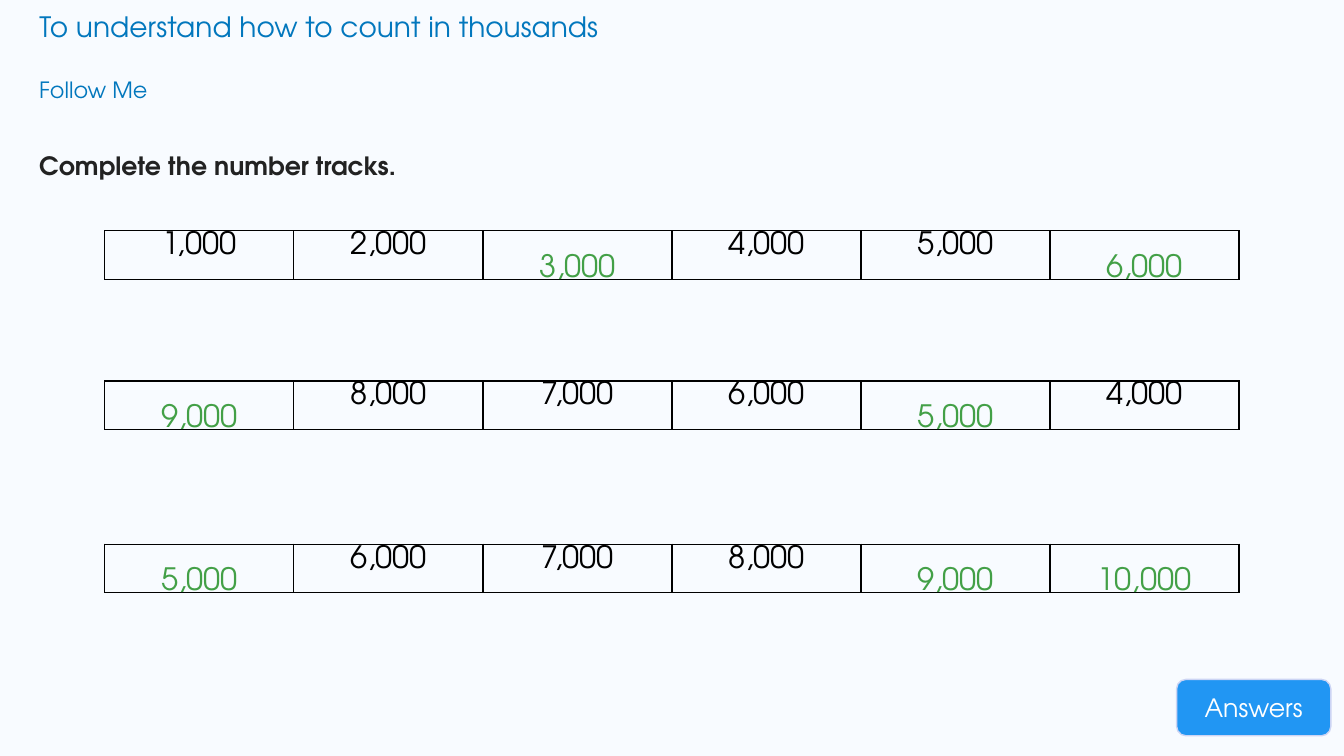
from dataclasses import dataclass

from lxml import etree
from pptx import Presentation
from pptx.dml.color import RGBColor
from pptx.enum.shapes import MSO_SHAPE
from pptx.enum.text import MSO_ANCHOR, MSO_AUTO_SIZE, PP_ALIGN
from pptx.oxml.ns import qn
from pptx.slide import Slide
from pptx.table import _Cell
from pptx.text.text import TextFrame
from pptx.util import Inches, Pt

ROUNDED = MSO_SHAPE.ROUNDED_RECTANGLE
TOP, MIDDLE = MSO_ANCHOR.TOP, MSO_ANCHOR.MIDDLE
NO_FIT = MSO_AUTO_SIZE.NONE
LEFT, CENTER = PP_ALIGN.LEFT, PP_ALIGN.CENTER

FONT = "TeX Gyre Adventor"
COLORS = {
    "background": "F8FBFF",
    "heading": "0277BD",
    "instruction": "222222",
    "number": "000000",
    "answer": "43A047",
    "button": "2196F3",
    "button_edge": "CCD4F4",
    "button_text": "FFFFFF",
}

TRACK_LEFT = 1.04
TRACK_WIDTH = 11.25
TRACK_HEIGHT = 0.48
ANSWER_HEIGHT = 0.57


@dataclass(frozen=True)
class TextStyle:
    size: int
    color: str
    bold: bool = False
    align: PP_ALIGN = LEFT
    spacing: float = 1.0
    anchor: MSO_ANCHOR = TOP


@dataclass(frozen=True)
class Label:
    text: str
    left: float
    top: float
    width: float
    height: float
    style: TextStyle
    inset: float = 0.05


@dataclass(frozen=True)
class NumberTrack:
    top: float
    numbers: tuple[str, ...]
    answers: tuple[int, ...]


NUMBER = TextStyle(22, "number", align=CENTER)
ANSWER = TextStyle(22, "answer", align=CENTER, spacing=1.15)
BUTTON = TextStyle(18, "button_text", align=CENTER, anchor=MIDDLE)

TITLE = Label("To understand how to count in thousands", 0.29, 0.04, 12.34, 0.44,
              TextStyle(20, "heading"))
LABELS = (
    Label("Follow Me", 0.29, 0.71, 2.97, 0.46, TextStyle(16, "heading")),
    Label("Complete the number tracks.", 0.29, 1.29, 12.84, 0.56,
          TextStyle(18, "instruction", bold=True, spacing=1.5)),
)
TRACKS = (
    NumberTrack(2.29, ("1,000", "2,000", "3,000", "4,000", "5,000", "6,000"), (2, 5)),
    NumberTrack(3.78, ("9,000", "8,000", "7,000", "6,000", "5,000", "4,000"), (0, 4)),
    NumberTrack(5.4, ("5,000", "6,000", "7,000", "8,000", "9,000", "10,000"), (0, 4, 5)),
)


def rgb(name: str) -> RGBColor:
    return RGBColor.from_string(COLORS[name])


def write(frame: TextFrame, text: str, style: TextStyle) -> None:
    frame.text = text
    paragraph = frame.paragraphs[0]
    paragraph.alignment = style.align
    paragraph.line_spacing = style.spacing
    font = paragraph.runs[0].font
    font.name = FONT
    font.size = Pt(style.size)
    font.bold = style.bold
    font.color.rgb = rgb(style.color)


def fill_frame(frame: TextFrame, label: Label) -> None:
    frame.word_wrap = True
    frame.auto_size = NO_FIT
    frame.vertical_anchor = label.style.anchor
    frame.margin_left = frame.margin_right = Inches(0.1)
    frame.margin_top = frame.margin_bottom = Inches(label.inset)
    write(frame, label.text, label.style)


def bounds(label: Label) -> tuple[int, ...]:
    return tuple(Inches(n) for n in (label.left, label.top, label.width, label.height))


def add_title(slide: Slide, label: Label) -> None:
    title = slide.shapes.title
    title.left, title.top, title.width, title.height = bounds(label)
    fill_frame(title.text_frame, label)


def add_label(slide: Slide, label: Label) -> None:
    fill_frame(slide.shapes.add_textbox(*bounds(label)).text_frame, label)


def add_button(slide: Slide, label: Label) -> None:
    button = slide.shapes.add_shape(ROUNDED, *bounds(label))
    button.shadow.inherit = False
    button.fill.solid()
    button.fill.fore_color.rgb = rgb("button")
    button.line.color.rgb = rgb("button_edge")
    button.line.width = Pt(1)
    fill_frame(button.text_frame, label)


def outline_cell(cell: _Cell) -> None:
    properties = cell._tc.get_or_add_tcPr()
    for position, side in enumerate(("lnL", "lnR", "lnT", "lnB")):
        border = etree.Element(qn(f"a:{side}"), w=str(Pt(1)))
        fill = etree.SubElement(border, qn("a:solidFill"))
        etree.SubElement(fill, qn("a:srgbClr"), val=COLORS["number"])
        properties.insert(position, border)


def add_track(slide: Slide, track: NumberTrack) -> None:
    step = TRACK_WIDTH / len(track.numbers)
    table = slide.shapes.add_table(
        1, len(track.numbers), Inches(TRACK_LEFT), Inches(track.top),
        Inches(TRACK_WIDTH), Inches(TRACK_HEIGHT)).table
    table.first_row = False
    table.horz_banding = False
    for column, number in enumerate(track.numbers):
        table.columns[column].width = Inches(step)
        cell = table.cell(0, column)
        cell.margin_left = cell.margin_right = Inches(0.1)
        cell.margin_top = Inches(0.01)
        cell.margin_bottom = 0
        cell.fill.background()
        outline_cell(cell)
        if column in track.answers:
            add_label(slide, Label(number, TRACK_LEFT + column * step, track.top,
                                   step, ANSWER_HEIGHT, ANSWER, inset=0.1))
        else:
            write(cell.text_frame, number, NUMBER)


def main() -> None:
    presentation = Presentation()
    presentation.slide_width = Inches(13.33)
    presentation.slide_height = Inches(7.5)
    slide = presentation.slides.add_slide(presentation.slide_layouts[5])
    slide.background.fill.solid()
    slide.background.fill.fore_color.rgb = rgb("background")
    add_title(slide, TITLE)
    for label in LABELS:
        add_label(slide, label)
    add_button(slide, Label("Answers", 11.67, 6.74, 1.53, 0.56, BUTTON))
    for track in TRACKS:
        add_track(slide, track)
    presentation.save("out.pptx")


if __name__ == "__main__":
    main()
